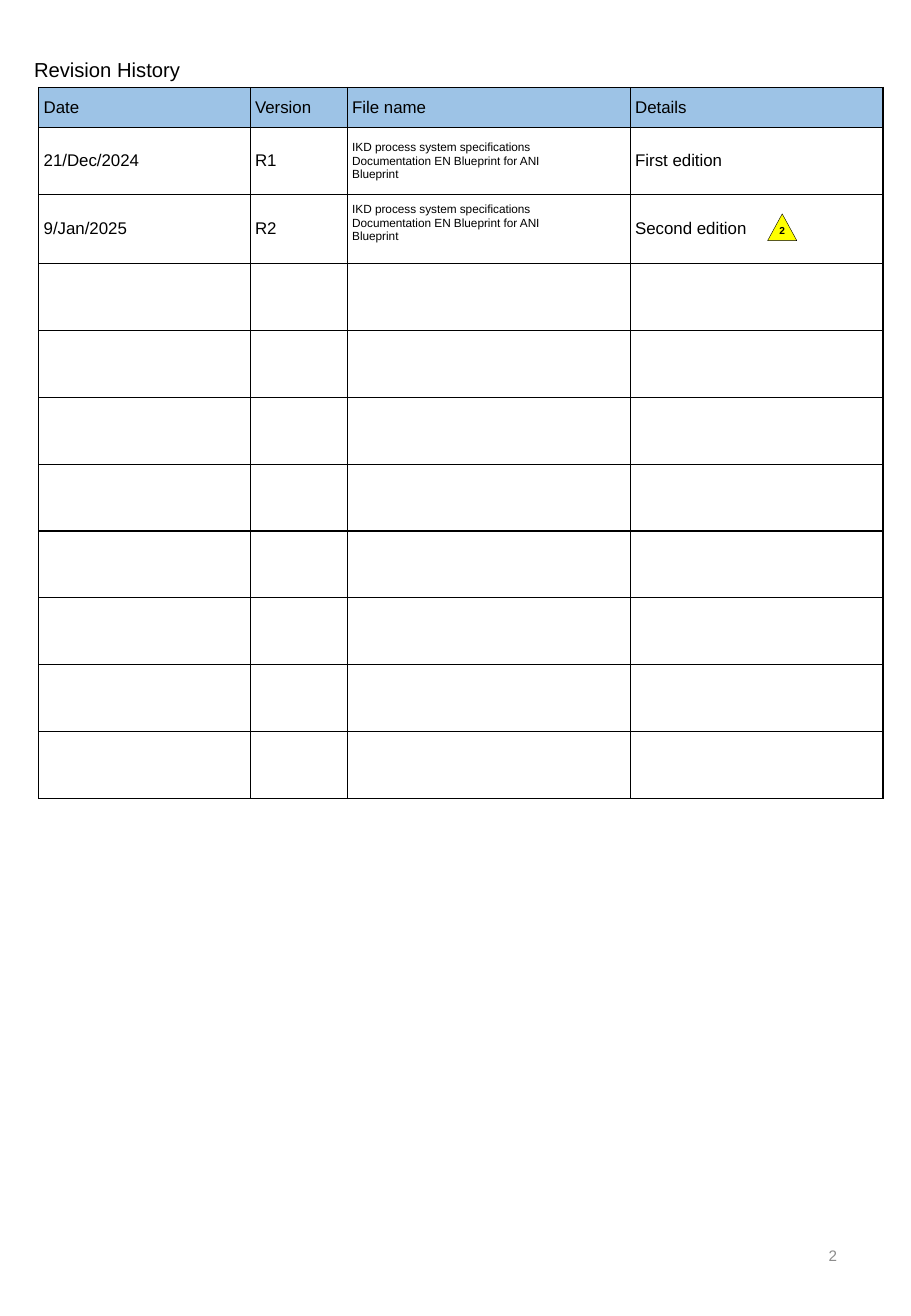
from lxml.etree import SubElement
from pptx import Presentation
from pptx.dml.color import RGBColor
from pptx.enum.shapes import MSO_SHAPE
from pptx.enum.text import MSO_ANCHOR, MSO_AUTO_SIZE, PP_ALIGN
from pptx.oxml.ns import qn
from pptx.util import Inches, Pt

COLORS = {"text": "000000", "header": "9DC3E6", "warning": "FFFF00", "number": "8C8C8C"}


def write(frame, text, size, color="text", align=PP_ALIGN.LEFT, bold=False):
    frame.text = text
    frame.vertical_anchor = MSO_ANCHOR.MIDDLE
    for para in frame.paragraphs:
        para.alignment = align
        para.font.name = "Arial"
        para.font.size = Pt(size)
        para.font.bold = bold
        para.font.color.rgb = RGBColor.from_string(COLORS[color])


def add_borders(cell):
    properties = cell._tc.get_or_add_tcPr()
    for side in ("lnL", "lnR", "lnT", "lnB"):
        line = SubElement(properties, qn(f"a:{side}"), w=str(Pt(0.75)))
        fill = SubElement(line, qn("a:solidFill"))
        SubElement(fill, qn("a:srgbClr"), val=COLORS["text"])


deck = Presentation()
deck.slide_width, deck.slide_height = Inches(7.5), Inches(10.83)
page = deck.slides.add_slide(deck.slide_layouts[5])

# Title
title = page.shapes.title
title.left, title.top = Inches(0.12), Inches(0.42)
title.width, title.height = Inches(1.56), Inches(0.3)
write(title.text_frame, "Revision History", 12)
title.text_frame.word_wrap = True
title.text_frame.auto_size = MSO_AUTO_SIZE.SHAPE_TO_FIT_TEXT
title.text_frame.paragraphs[0]._p.get_or_add_pPr().set("indent", str(Inches(0.06)))

# Revision table
file_name = "IKD process system specifications\nDocumentation EN Blueprint for ANI\nBlueprint"
revisions = [
    ("Date", "Version", "File name", "Details"),
    ("21/Dec/2024", "R1", file_name, "First edition"),
    ("9/Jan/2025", "R2", file_name, "Second edition"),
]
column_widths = [1.74, 0.8, 2.33, 2.08]
row_heights = [0.33, 0.55, 0.57] + [0.55] * 8

table = page.shapes.add_table(
    len(row_heights), len(column_widths),
    Inches(0.32), Inches(0.72), Inches(6.95), Inches(5.87),
).table
table.first_row = table.horz_banding = False
for column, width in zip(table.columns, column_widths):
    column.width = Inches(width)
for row, height in zip(table.rows, row_heights):
    row.height = Inches(height)
for cell in table.iter_cells():
    add_borders(cell)
    cell.fill.background()
    cell.margin_left = Inches(0.04)
    cell.margin_top = cell.margin_bottom = Inches(0.05)

for row, revision in enumerate(revisions):
    for column, text in enumerate(revision):
        cell = table.cell(row, column)
        write(cell.text_frame, text, 7 if text == file_name else 10)
        cell.vertical_anchor = MSO_ANCHOR.MIDDLE
        if row == 0:
            cell.fill.solid()
            cell.fill.fore_color.rgb = RGBColor.from_string(COLORS["header"])
# The second file name sits a little above the middle of its row
table.cell(2, 2).margin_bottom = Inches(0.15)

# Page number
number = page.shapes.add_textbox(Inches(5.3), Inches(10.04), Inches(1.69), Inches(0.58))
number.text_frame.word_wrap = True
write(number.text_frame, "2", 9, "number", PP_ALIGN.RIGHT)

# Revision mark
mark = page.shapes.add_shape(
    MSO_SHAPE.ISOSCELES_TRIANGLE, Inches(6.32), Inches(1.76), Inches(0.24), Inches(0.22)
)
mark.shadow.inherit = False
mark.fill.solid()
mark.fill.fore_color.rgb = RGBColor.from_string(COLORS["warning"])
mark.line.color.rgb = RGBColor.from_string(COLORS["text"])
mark.line.width = Pt(0.25)
mark.text_frame.margin_top = 0
mark.text_frame.word_wrap = False
write(mark.text_frame, "2", 6, align=PP_ALIGN.CENTER, bold=True)

deck.save("out.pptx")
